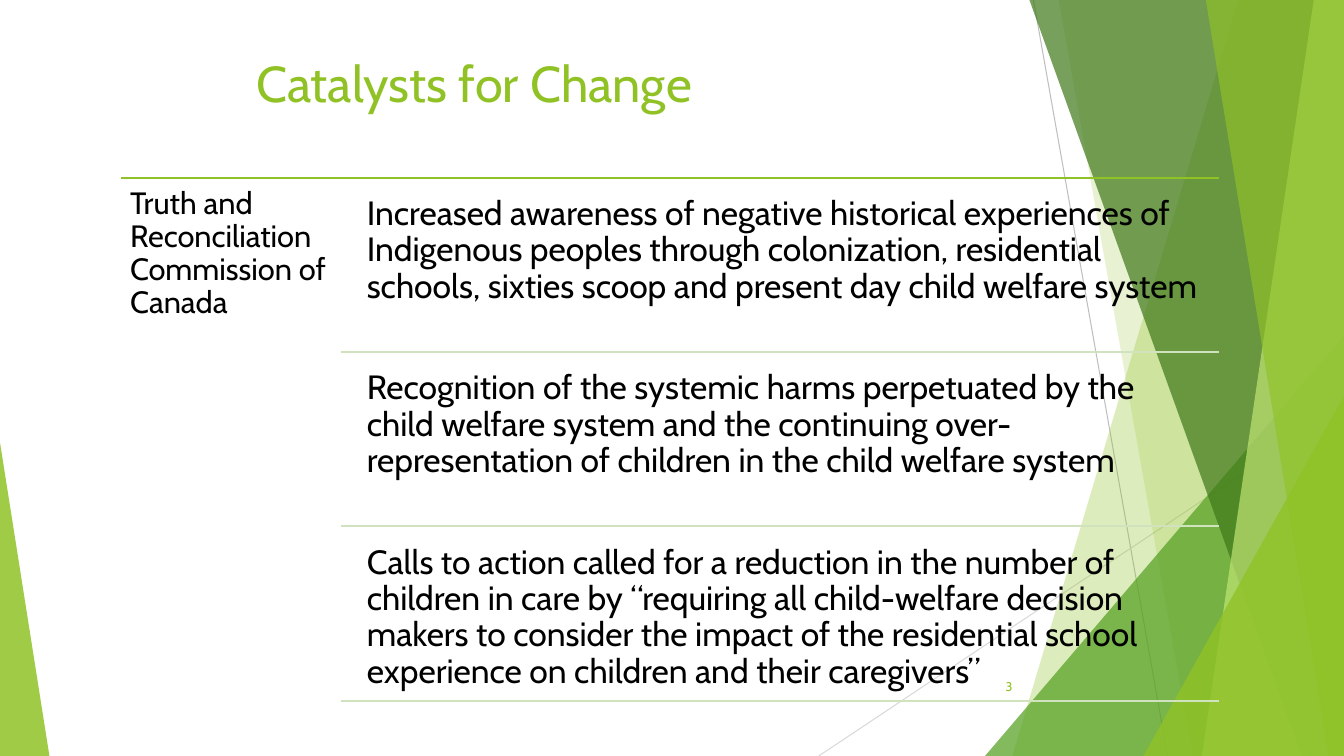
from lxml.etree import SubElement
from pptx import Presentation
from pptx.dml.color import RGBColor
from pptx.enum.shapes import MSO_CONNECTOR, MSO_SHAPE
from pptx.enum.text import MSO_ANCHOR, PP_ALIGN
from pptx.oxml.ns import qn
from pptx.util import Inches, Pt

GREEN, PALE, BLACK = "90C226", "D1E3BE", "000000"

deck = Presentation()
deck.slide_width, deck.slide_height = Inches(13.33), Inches(7.5)
slide = deck.slides.add_slide(deck.slide_layouts[5])
shapes = slide.shapes


def paint(part, color, alpha=100):
    if hasattr(part, "solid"):
        part.solid()
        part = part.fore_color
    part.rgb = RGBColor.from_string(color)
    if alpha < 100:
        for node in part._xFill.iter(qn("a:srgbClr")):
            SubElement(node, qn("a:alpha"), val=str(alpha * 1000))


def rule(left, top, right, base, color, width):
    line = shapes.add_connector(MSO_CONNECTOR.STRAIGHT, Inches(left), Inches(top), Inches(right), Inches(base))
    paint(line.line.fill, color)
    line.line.width = Pt(width)
    SubElement(line._element.spPr, qn("a:effectLst"))


rule(10.25, 0, 11.58, 7.5, "BFBFBF", 0.75)
rule(13.33, 4.03, 8.12, 7.5, "D9D9D9", 0.75)

facets = [
    ("band", 12.28, 10.04, GREEN, 30),
    ("band", 10.5, 11.83, GREEN, 20),
    ("peak", (9.77, 3.33, 3.56, 4.17), 1, "54A021", 72),
    ("band", 10.21, 12.91, "3F7819", 70),
    ("band", 13.03, 11.92, "C0E474", 70),
    ("band", 11.96, 13.18, GREEN, 65),
    ("peak", (11.34, 3.93, 1.99, 3.57), 1, GREEN, 80),
    ("peak", (0, 4.39, 0.49, 3.11), 0, GREEN, 85),
]
for kind, start, end, color, alpha in facets:
    if kind == "band":
        pen = shapes.build_freeform(Inches(start), 0)
        corners = [(13.33, 0), (13.33, 7.5), (end, 7.5)]
        pen.add_line_segments([(Inches(x), Inches(y)) for x, y in corners])
        facet = pen.convert_to_shape()
    else:
        facet = shapes.add_shape(MSO_SHAPE.ISOSCELES_TRIANGLE, *map(Inches, start))
        facet.adjustments[0] = end
    paint(facet.fill, color, alpha)
    facet.line.fill.background()
    facet.shadow.inherit = False

title = shapes.title
title.left, title.top, title.width, title.height = map(Inches, (2.44, 0.47, 8.45, 1.14))
title.text_frame.text = "Catalysts for Change"
title.text_frame.vertical_anchor = MSO_ANCHOR.TOP
head = title.text_frame.paragraphs[0]
head.alignment = PP_ALIGN.LEFT
head.font.name, head.font.size = "Cabin", Pt(36)
paint(head.font.color, GREEN)

points = [
    "Increased awareness of negative historical experiences of Indigenous peoples through colonization, residential schools, sixties scoop and present day child welfare system",
    "Recognition of the systemic harms perpetuated by the child welfare system and the continuing over-representation of children in the child welfare system",
    "Calls to action called for a reduction in the number of children in care by “requiring all child-welfare decision makers to consider the impact of the residential school experience on children and their caregivers”",
]
step = 1.73
rule(1.2, 1.77, 12.09, 1.77, GREEN, 1.5)
texts = [("Truth and Reconciliation Commission of Canada", (1.2, 1.77, 2.18, 5.26), 22, 0.09)]
for row, point in enumerate(points):
    base = 3.49 + row * step
    rule(3.38, base, 12.09, base, PALE, 1.5)
    texts.append((point, (3.54, 1.85 + row * step, 8.55, 1.64), 24, 0.1))
texts.append(("3", (9.39, 6.61, 0.75, 0.4), 9, 0.1))

for words, place, size, inset in texts:
    box = shapes.add_textbox(*map(Inches, place))
    frame = box.text_frame
    frame.word_wrap = True
    frame.margin_left = frame.margin_right = Inches(inset)
    frame.margin_top = frame.margin_bottom = Inches(inset)
    frame.text = words
    para = frame.paragraphs[0]
    para.font.name, para.font.size = "Cabin", Pt(size)
    if words == "3":
        frame.margin_top = frame.margin_bottom = Inches(0.05)
        frame.vertical_anchor = MSO_ANCHOR.MIDDLE
        para.alignment = PP_ALIGN.RIGHT
        paint(para.font.color, GREEN)
    else:
        para.line_spacing = 0.9
        paint(para.font.color, BLACK)

deck.save("out.pptx")
